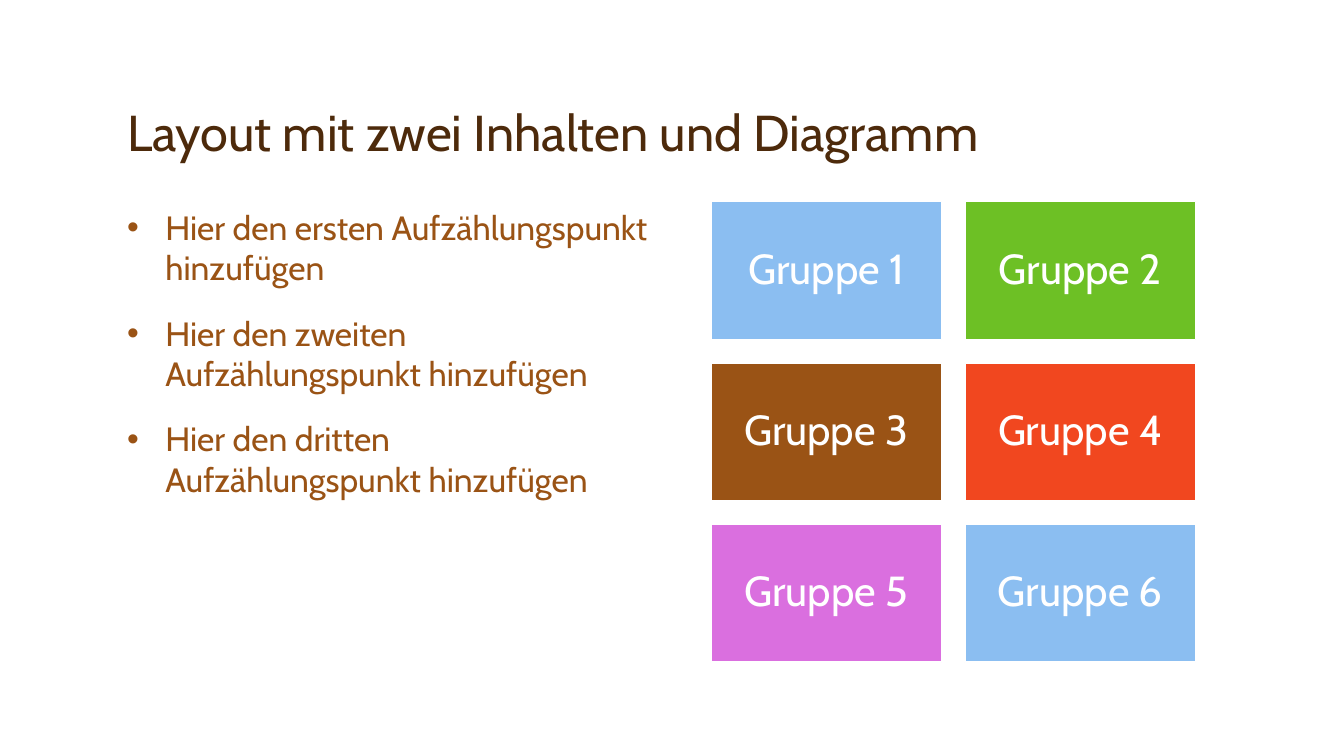
"""Build a slide with a bullet list beside a grid of six coloured groups."""
from dataclasses import dataclass

import lxml.etree
import pptx
import pptx.dml.color
import pptx.enum.shapes
import pptx.enum.text
import pptx.oxml.ns
import pptx.util

PX = 9144
ANCHOR = pptx.enum.text.MSO_ANCHOR
ALIGN = pptx.enum.text.PP_ALIGN


@dataclass(frozen=True)
class Theme:
    """Hold the font, type sizes and colours."""

    font: str = "Cabin"
    title_size: int = 36
    body_size: int = 24
    group_size: int = 30
    title: str = "4D2A0B"
    body: str = "9A5315"
    white: str = "FFFFFF"
    groups: tuple = ("8BBEF1", "6DC025", "9A5315", "F1471F", "DA6FDF", "8BBEF1")


THEME = Theme()
HEADING = "Layout mit zwei Inhalten und Diagramm"
POINTS = (
    "Hier den ersten Aufzählungspunkt hinzufügen",
    "Hier den zweiten Aufzählungspunkt hinzufügen",
    "Hier den dritten Aufzählungspunkt hinzufügen",
)
COLUMNS = 2
GRID_LEFT, GRID_TOP = 705, 200
GROUP_WIDTH, GROUP_HEIGHT, GAP = 229, 137, 23


def rgb(value):
    """Return a colour from its hex value."""
    return pptx.dml.color.RGBColor.from_string(value)


def apply_format(target, values):
    """Set each named attribute on the target."""
    for attribute, value in values.items():
        setattr(target, attribute, value)


def place(placeholder, left, top, width, height):
    """Move and size a placeholder in px."""
    box = {"left": left, "top": top, "width": width, "height": height}
    apply_format(placeholder, {side: length * PX for side, length in box.items()})


def write(paragraph, wording, size, colour, **layout):
    """Fill a paragraph with one formatted run."""
    apply_format(paragraph, layout)
    run = paragraph.add_run()
    run.text = wording
    apply_format(run.font, {"name": THEME.font, "size": pptx.util.Pt(size)})
    run.font.color.rgb = rgb(colour)


def add_bullet(paragraph, indent):
    """Give a paragraph a round bullet and a hanging indent in px."""
    properties = paragraph._p.get_or_add_pPr()
    properties.set("marL", str(indent * PX))
    properties.set("indent", str(-indent * PX))
    for tag, key, value in (("a:buFont", "typeface", "Arial"), ("a:buChar", "char", "•")):
        lxml.etree.SubElement(properties, pptx.oxml.ns.qn(tag)).set(key, value)


def fill_title(title):
    """Place and write the slide title."""
    place(title, 116, 33, 1100, 133)
    apply_format(title.text_frame, {
        "vertical_anchor": ANCHOR.BOTTOM,
        "auto_size": pptx.enum.text.MSO_AUTO_SIZE.NONE,
    })
    write(title.text_frame.paragraphs[0], HEADING, THEME.title_size, THEME.title,
          alignment=ALIGN.LEFT, line_spacing=0.9)


def fill_points(body):
    """Place and write the bullet list."""
    place(body, 116, 200, 538, 458)
    frame = body.text_frame
    frame.auto_size = pptx.enum.text.MSO_AUTO_SIZE.NONE
    for number, point in enumerate(POINTS):
        paragraph = frame.add_paragraph() if number else frame.paragraphs[0]
        add_bullet(paragraph, 38)
        write(paragraph, point, THEME.body_size, THEME.body,
              space_before=pptx.util.Pt(18 if number else 0))


def add_group(slide, index, colour):
    """Add one labelled rectangle at its cell in the grid."""
    row, column = divmod(index, COLUMNS)
    group = slide.shapes.add_shape(
        pptx.enum.shapes.MSO_SHAPE.RECTANGLE,
        (GRID_LEFT + column * (GROUP_WIDTH + GAP)) * PX,
        (GRID_TOP + row * (GROUP_HEIGHT + GAP)) * PX,
        GROUP_WIDTH * PX, GROUP_HEIGHT * PX)
    group.shadow.inherit = False
    group.fill.solid()
    group.fill.fore_color.rgb = rgb(colour)
    group.line.color.rgb = rgb(THEME.white)
    group.line.width = pptx.util.Pt(1)
    margins = {f"margin_{side}": 12 * PX for side in ("left", "top", "right", "bottom")}
    apply_format(group.text_frame,
                 {"word_wrap": True, "vertical_anchor": ANCHOR.MIDDLE, **margins})
    write(group.text_frame.paragraphs[0], f"Gruppe {index + 1}", THEME.group_size,
          THEME.white, alignment=ALIGN.CENTER, line_spacing=0.9)


def main():
    """Build and save the slide."""
    presentation = pptx.Presentation()
    apply_format(presentation, {"slide_width": 1333 * PX, "slide_height": 750 * PX})
    slide = presentation.slides.add_slide(presentation.slide_layouts[1])
    fill_title(slide.shapes.title)
    fill_points(slide.placeholders[1])
    for index, colour in enumerate(THEME.groups):
        add_group(slide, index, colour)
    presentation.save("out.pptx")


if __name__ == "__main__":
    main()
